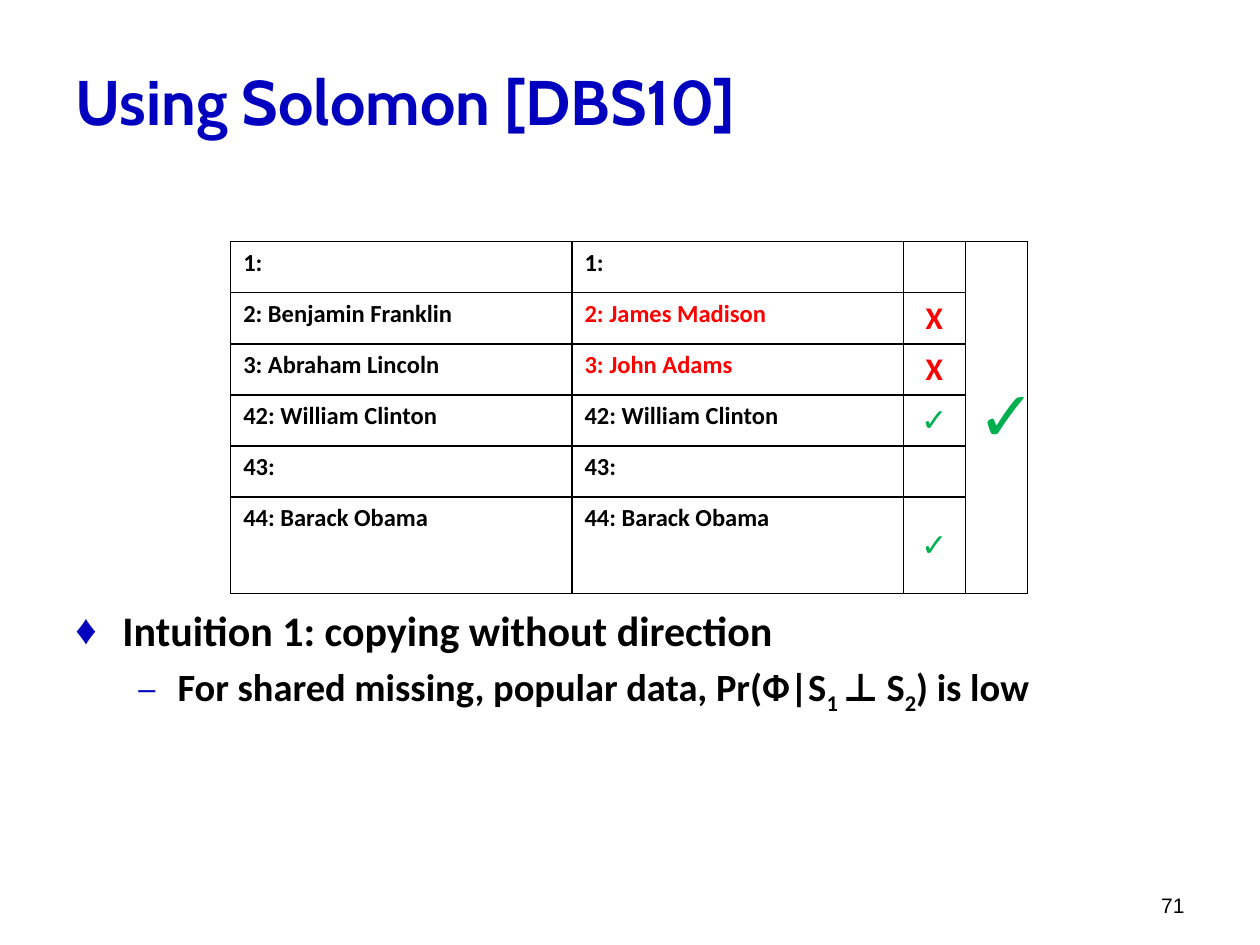
from lxml import etree
from pptx import Presentation
from pptx.dml.color import RGBColor
from pptx.enum.text import MSO_ANCHOR, PP_ALIGN
from pptx.oxml.ns import qn
from pptx.util import Cm, Pt

TOP, MIDDLE, BOTTOM = MSO_ANCHOR.TOP, MSO_ANCHOR.MIDDLE, MSO_ANCHOR.BOTTOM
LEFT, CENTER, RIGHT = PP_ALIGN.LEFT, PP_ALIGN.CENTER, PP_ALIGN.RIGHT
COLORS = {"blue": "0000BE", "black": "000000", "red": "FF0000", "green": "00B050"}

COLUMN_WIDTHS = [6.88, 6.68, 1.25, 1.25]
ROW_HEIGHT = 1.03
# First source, second source, mark for the pair
PRESIDENTS = [
    ("1:", "1:", ""),
    ("2: Benjamin Franklin", "2: James Madison", "X"),
    ("3: Abraham Lincoln", "3: John Adams", "X"),
    ("42: William Clinton", "42: William Clinton", "✓"),
    ("43:", "43:", ""),
    ("44: Barack Obama", "44: Barack Obama", "✓"),
]


class SlideWriter:
    def __init__(self, page, font="Calibri"):
        self.page = page
        self.font = font

    def style(self, para, size, color="black", bold=True, font=None):
        for span in para.runs:
            span.font.name = font or self.font
            span.font.size = Pt(size)
            span.font.bold = bold
            span.font.color.rgb = RGBColor.from_string(COLORS[color])

    def text_box(self, left, top, width, height, anchor=TOP):
        box = self.page.shapes.add_textbox(Cm(left), Cm(top), Cm(width), Cm(height))
        box.text_frame.word_wrap = True
        box.text_frame.vertical_anchor = anchor
        return box.text_frame

    def label(self, text, place, size, anchor, align=LEFT, **look):
        frame = self.text_box(*place, anchor=anchor)
        frame.text = text
        para = frame.paragraphs[0]
        para.alignment = align
        self.style(para, size, **look)

    def bullet(self, para, parts, size, mark, margin, hang, level=0, mark_size=100):
        """Write a bulleted paragraph; every second part is a subscript."""
        for index, part in enumerate(parts):
            span = para.add_run()
            span.text = part
            if index % 2:
                span.font._element.set("baseline", "-25000")
        self.style(para, size)
        para.level = level
        para.space_before = Pt(size * 0.2)
        props = para._p.get_or_add_pPr()
        props.set("marL", str(Cm(margin)))
        props.set("indent", str(-Cm(hang)))
        color = etree.SubElement(props, qn("a:buClr"))
        etree.SubElement(color, qn("a:srgbClr"), val=COLORS["blue"])
        etree.SubElement(props, qn("a:buSzPct"), val=str(mark_size * 1000))
        etree.SubElement(props, qn("a:buFont"), typeface="Arial")
        etree.SubElement(props, qn("a:buChar"), char=mark)

    def cell(self, cell, text, size=14, color="black", centered=False):
        cell.text = text
        para = cell.text_frame.paragraphs[0]
        self.style(para, size, color)
        if centered:
            cell.vertical_anchor = MIDDLE
            para.alignment = CENTER

    def border(self, cell):
        props = cell._tc.get_or_add_tcPr()
        for side in ("lnL", "lnR", "lnT", "lnB"):
            line = etree.SubElement(props, qn(f"a:{side}"), w=str(Pt(1)))
            fill = etree.SubElement(line, qn("a:solidFill"))
            etree.SubElement(fill, qn("a:srgbClr"), val=COLORS["black"])

    def table(self, left, top, widths, row_height, row_count):
        """Add an unfilled table with a thin line around each cell."""
        frame = self.page.shapes.add_table(
            row_count, len(widths), Cm(left), Cm(top),
            Cm(sum(widths)), Cm(row_height * row_count))
        table = frame.table
        table.first_row = table.horz_banding = False
        for column, width in zip(table.columns, widths):
            column.width = Cm(width)
        for row in table.rows:
            row.height = Cm(row_height)
        for cell in table.iter_cells():
            self.border(cell)
            cell.fill.background()
        return table


def main():
    deck = Presentation()
    deck.slide_width, deck.slide_height = Cm(25.4), Cm(19.05)
    writer = SlideWriter(deck.slides.add_slide(deck.slide_layouts[6]))

    writer.label("Using Solomon [DBS10]", (1.27, 0.85, 24.13, 2.33), 36, MIDDLE,
                 color="blue", font="Cabin")
    writer.label("71", (18.2, 17.36, 5.93, 1.27), 12, BOTTOM, RIGHT,
                 bold=False, font="Arial")

    body = writer.text_box(1.27, 12.07, 24.13, 5.93)
    writer.bullet(body.paragraphs[0], ["Intuition 1: copying without direction"],
                  24, "♦", 0.95, 0.95)
    writer.bullet(body.add_paragraph(),
                  ["For shared missing, popular data, Pr(Ф|S", "1 ", "⊥ S", "2", ") is low"],
                  22, "–", 2.06, 0.79, level=1, mark_size=80)

    table = writer.table(4.65, 4.87, COLUMN_WIDTHS, ROW_HEIGHT, len(PRESIDENTS))
    for row, (first, second, mark) in enumerate(PRESIDENTS):
        wrong = mark == "X"
        writer.cell(table.cell(row, 0), first)
        writer.cell(table.cell(row, 1), second, color="red" if wrong else "black")
        if mark:
            writer.cell(table.cell(row, 2), mark, 18, "red" if wrong else "green", True)
    verdict = table.cell(0, 3)
    verdict.merge(table.cell(len(PRESIDENTS) - 1, 3))
    writer.cell(verdict, "✓", 40, "green", True)

    deck.save("out.pptx")


if __name__ == "__main__":
    main()
